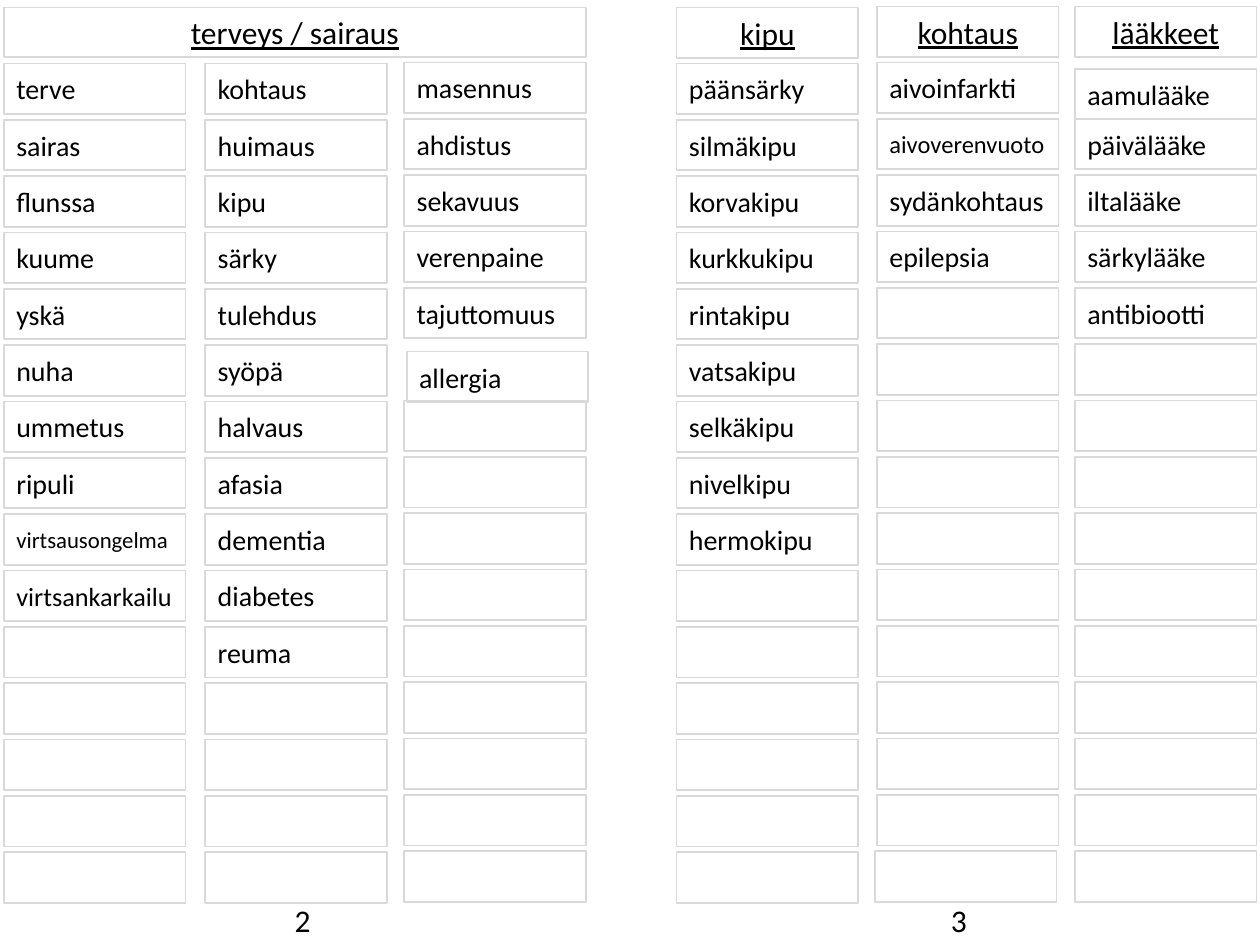
import pptx
import pptx.dml.color
import pptx.enum.shapes
import pptx.enum.text
import pptx.util

Cm = pptx.util.Cm
BLACK = pptx.dml.color.RGBColor(0x00, 0x00, 0x00)
BORDER_GREY = pptx.dml.color.RGBColor(0xD9, 0xD9, 0xD9)
FONT = "Calibri"
ALIGN = pptx.enum.text.PP_ALIGN

CELL_WIDTH, CELL_HEIGHT = 3.66, 1.02
ROW_COUNT = 15
ROW_PITCH = 15.9 / (ROW_COUNT - 1)
HEADING_PITCH = 1.13
HEADING_SIZE, WORD_SIZE = 18, 16
LONG_WORD_SIZES = {"virtsausongelma": 13, "virtsankarkailu": 15, "aivoverenvuoto": 14}

HEALTH_COLUMNS = [
    (0.08, 1.28, ["terve", "sairas", "flunssa", "kuume", "yskä", "nuha", "ummetus",
                  "ripuli", "virtsausongelma", "virtsankarkailu"], {}),
    (4.14, 1.28, ["kohtaus", "huimaus", "kipu", "särky", "tulehdus", "syöpä",
                  "halvaus", "afasia", "dementia", "diabetes", "reuma"], {}),
    (8.15, 1.26, ["masennus", "ahdistus", "sekavuus", "verenpaine", "tajuttomuus",
                  "allergia"], {5: (0.05, 0.15)}),
]
HEADED_COLUMNS = [
    ("kipu", 13.64, 1.28, ["päänsärky", "silmäkipu", "korvakipu", "kurkkukipu",
                           "rintakipu", "vatsakipu", "selkäkipu", "nivelkipu",
                           "hermokipu"], {}),
    ("kohtaus", 17.68, 1.26, ["aivoinfarkti", "aivoverenvuoto", "sydänkohtaus",
                              "epilepsia"], {14: (-0.04, 0)}),
    ("lääkkeet", 21.67, 1.26, ["aamulääke", "päivälääke", "iltalääke", "särkylääke",
                               "antibiootti"], {0: (0, 0.13)}),
]
PAGE_NUMBERS = [("2", 5.69, 0.86), ("3", 18.92, 1.09)]


def write_text(holder, text, size, align=ALIGN.LEFT, underline=None):
    """Put one formatted paragraph into a shape."""
    frame = holder.text_frame
    frame.text = text
    frame.word_wrap = True
    paragraph = frame.paragraphs[0]
    paragraph.alignment = align
    font = paragraph.runs[0].font
    font.name = FONT
    font.size = pptx.util.Pt(size)
    font.color.rgb = BLACK
    font.underline = underline


def style_cell(cell):
    """Give a cell its grey border and middle anchoring."""
    cell.fill.background()
    cell.line.color.rgb = BORDER_GREY
    cell.line.width = pptx.util.Pt(1)
    cell.text_frame.vertical_anchor = pptx.enum.text.MSO_ANCHOR.MIDDLE


def add_cell(slide, left, top):
    """Add one empty bordered cell."""
    cell = slide.shapes.add_shape(
        pptx.enum.shapes.MSO_SHAPE.RECTANGLE,
        Cm(left), Cm(top), Cm(CELL_WIDTH), Cm(CELL_HEIGHT))
    cell.shadow.inherit = False
    style_cell(cell)
    return cell


def place_title(slide, left, top, width, height):
    """Move and format the title placeholder."""
    title = slide.shapes.title
    title.left, title.top = Cm(left), Cm(top)
    title.width, title.height = Cm(width), Cm(height)
    write_text(title, "terveys / sairaus", HEADING_SIZE, ALIGN.CENTER, True)
    title.text_frame.auto_size = pptx.enum.text.MSO_AUTO_SIZE.NONE
    style_cell(title)


def add_word_column(slide, left, top, words, offsets):
    """Stack the cells of a column, filling the first ones with words."""
    for row in range(ROW_COUNT):
        shift_x, shift_y = offsets.get(row, (0, 0))
        cell = add_cell(slide, left + shift_x, top + row * ROW_PITCH + shift_y)
        if row < len(words):
            word = words[row]
            write_text(cell, word, LONG_WORD_SIZES.get(word, WORD_SIZE))


def add_headed_column(slide, heading, left, top, words, offsets):
    """Add a word column with an underlined heading cell above it."""
    heading_cell = add_cell(slide, left, top - HEADING_PITCH)
    write_text(heading_cell, heading, HEADING_SIZE, ALIGN.CENTER, True)
    add_word_column(slide, left, top, words, offsets)


def add_page_number(slide, number, left, top, width, height):
    """Add a page number below its half of the spread."""
    page_number = slide.shapes.add_textbox(Cm(left), Cm(top), Cm(width), Cm(height))
    write_text(page_number, number, HEADING_SIZE)
    page_number.text_frame.auto_size = pptx.enum.text.MSO_AUTO_SIZE.SHAPE_TO_FIT_TEXT


def main():
    """Build the vocabulary spread and save it."""
    presentation = pptx.Presentation()
    presentation.slide_width, presentation.slide_height = Cm(25.4), Cm(19.05)
    slide = presentation.slides.add_slide(presentation.slide_layouts[5])
    place_title(slide, 0.08, 0.15, 11.73, 1)
    for column in HEALTH_COLUMNS:
        add_word_column(slide, *column)
    for column in HEADED_COLUMNS:
        add_headed_column(slide, *column)
    for number, left, width in PAGE_NUMBERS:
        add_page_number(slide, number, left, 18.03, width, CELL_HEIGHT)
    presentation.save("out.pptx")


if __name__ == "__main__":
    main()
